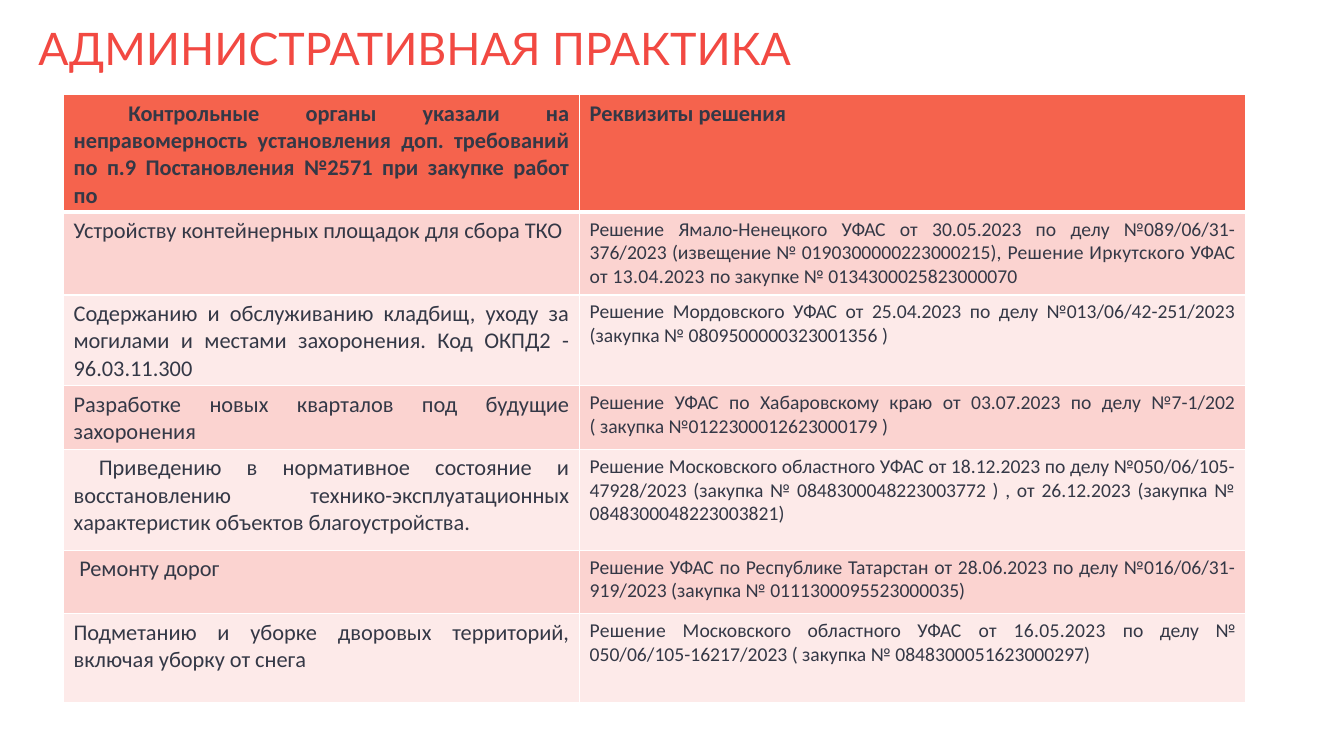
from typing import NamedTuple

from lxml import etree
from pptx import Presentation
from pptx.dml.color import RGBColor
from pptx.enum.text import MSO_ANCHOR, PP_ALIGN
from pptx.oxml.ns import qn
from pptx.util import Pt

TOP = MSO_ANCHOR.TOP
JUSTIFY = PP_ALIGN.JUSTIFY

ACCENT = "F24942"
HEADER_FILL = "F5634D"
BAND_FILLS = ("FBD3D0", "FDEAE9")
INK = "343846"
WHITE = "FFFFFF"
SUBJECT_SIZE, DECISION_SIZE = 16, 14


class Span(NamedTuple):
    text: str
    tracking: float = 0


class Practice(NamedTuple):
    height: float
    subject: str
    decision: tuple[Span, ...]
    indent: float = 0


HEADER = Practice(
    81.4,
    "Контрольные органы указали на неправомерность установления доп. требований "
    "по п.9 Постановления №2571 при закупке работ по",
    (Span("Реквизиты решения"),),
    39,
)
PRACTICES = (
    Practice(59, "Устройству контейнерных площадок для сбора ТКО", (
        Span("Решение Ямало-Ненецкого УФАС от 30.05.2023 по делу №089/06/31-376/2023 "
             "(извещение № 0190300000223000215), "),
        Span("Решение Иркутского УФАС от 13.04.2023 ", 0.2),
        Span("по закупке № 0134300025823000070"),
    )),
    Practice(63.4, "Содержанию и обслуживанию кладбищ, уходу за могилами и местами "
             "захоронения. Код ОКПД2 - 96.03.11.300", (
        Span("Решение Мордовского УФАС от 25.04.2023 по делу №013/06/42-251/2023 "
             "(закупка № 0809500000323001356 )"),
    )),
    Practice(45.4, "Разработке новых кварталов под будущие захоронения", (
        Span("Решение УФАС по Хабаровскому краю от 03.07.2023 по делу №7-1/202 "
             "( закупка №0122300012623000179 )"),
    )),
    Practice(72, "Приведению в нормативное состояние и восстановлению "
             "технико-эксплуатационных характеристик объектов благоустройства.", (
        Span("Решение Московского областного УФАС от 18.12.2023 по делу "
             "№050/06/105-47928/2023 (закупка № 0848300048223003772 ) , "
             "от 26.12.2023 (закупка № 0848300048223003821)"),
    ), 18),
    Practice(45.4, "Ремонту дорог", (
        Span("Решение УФАС по Республике Татарстан от 28.06.2023 по делу "
             "№016/06/31-919/2023 (закупка № 0111300095523000035)"),
    ), 4),
    Practice(63.4, "Подметанию и уборке дворовых территорий, включая уборку от снега", (
        Span("Решение", 0.2),
        Span(" Московского областного УФАС"),
        Span(" от 16.05.2023 ", 0.2),
        Span("по делу № 050/06/105-16217/2023 ( закупка № 0848300051623000297)"),
    )),
)


def color(value: str) -> RGBColor:
    return RGBColor.from_string(value)


def add_span(paragraph, span: Span, font: str, size: float, ink: str,
             bold: bool = False) -> None:
    run = paragraph.add_run()
    run.text = span.text
    run.font.name = font
    run.font.size = Pt(size)
    run.font.bold = bold
    run.font.color.rgb = color(ink)
    if span.tracking:
        run._r.get_or_add_rPr().set("spc", str(round(span.tracking * 100)))


def set_borders(cell, top: float, bottom: float) -> None:
    """Draw white cell borders; they must precede the fill in the XML."""
    properties = cell._tc.get_or_add_tcPr()
    for side, width in (("lnL", 1), ("lnR", 1), ("lnT", top), ("lnB", bottom)):
        line = etree.SubElement(properties, qn(f"a:{side}"), w=str(Pt(width)))
        fill = etree.SubElement(line, qn("a:solidFill"))
        etree.SubElement(fill, qn("a:srgbClr"), val=WHITE)


def fill_cell(cell, spans: tuple[Span, ...], size: float, background: str,
              top: float, bottom: float, bold: bool, indent: float = 0) -> None:
    set_borders(cell, top, bottom)
    cell.fill.solid()
    cell.fill.fore_color.rgb = color(background)
    cell.vertical_anchor = TOP
    paragraph = cell.text_frame.paragraphs[0]
    paragraph.alignment = JUSTIFY
    if indent:
        paragraph._p.get_or_add_pPr().set("indent", str(Pt(indent)))
    for span in spans:
        add_span(paragraph, span, "Calibri", size, INK, bold)


def add_title(slide) -> None:
    title = slide.shapes.add_textbox(Pt(27.4), Pt(15.8), Pt(824.4), Pt(51.8))
    frame = title.text_frame
    frame.word_wrap = True
    frame.vertical_anchor = TOP
    frame.margin_left = 0
    paragraph = frame.paragraphs[0]
    paragraph.line_spacing = 0.9
    add_span(paragraph, Span("АДМИНИСТРАТИВНАЯ ПРАКТИКА"), "Lato", 32, ACCENT)


def add_practice_table(slide) -> None:
    rows = (HEADER, *PRACTICES)
    widths = (368.6, 475.9)
    table = slide.shapes.add_table(
        len(rows), len(widths), Pt(45.4), Pt(67.7), Pt(sum(widths)),
        Pt(sum(row.height for row in rows))).table
    table.horz_banding = False
    for column, width in zip(table.columns, widths):
        column.width = Pt(width)
    for index, practice in enumerate(rows):
        table.rows[index].height = Pt(practice.height)
        is_header = index == 0
        background = HEADER_FILL if is_header else BAND_FILLS[(index - 1) % 2]
        top = 3 if index == 1 else 1
        bottom = 3 if is_header else 1
        fill_cell(table.cell(index, 0), (Span(practice.subject),), SUBJECT_SIZE,
                  background, top, bottom, is_header, practice.indent)
        fill_cell(table.cell(index, 1), practice.decision,
                  SUBJECT_SIZE if is_header else DECISION_SIZE,
                  background, top, bottom, is_header)


def main() -> None:
    presentation = Presentation()
    presentation.slide_width = Pt(960)
    presentation.slide_height = Pt(540)
    slide = presentation.slides.add_slide(presentation.slide_layouts[6])
    add_title(slide)
    add_practice_table(slide)
    presentation.save("out.pptx")


if __name__ == "__main__":
    main()
